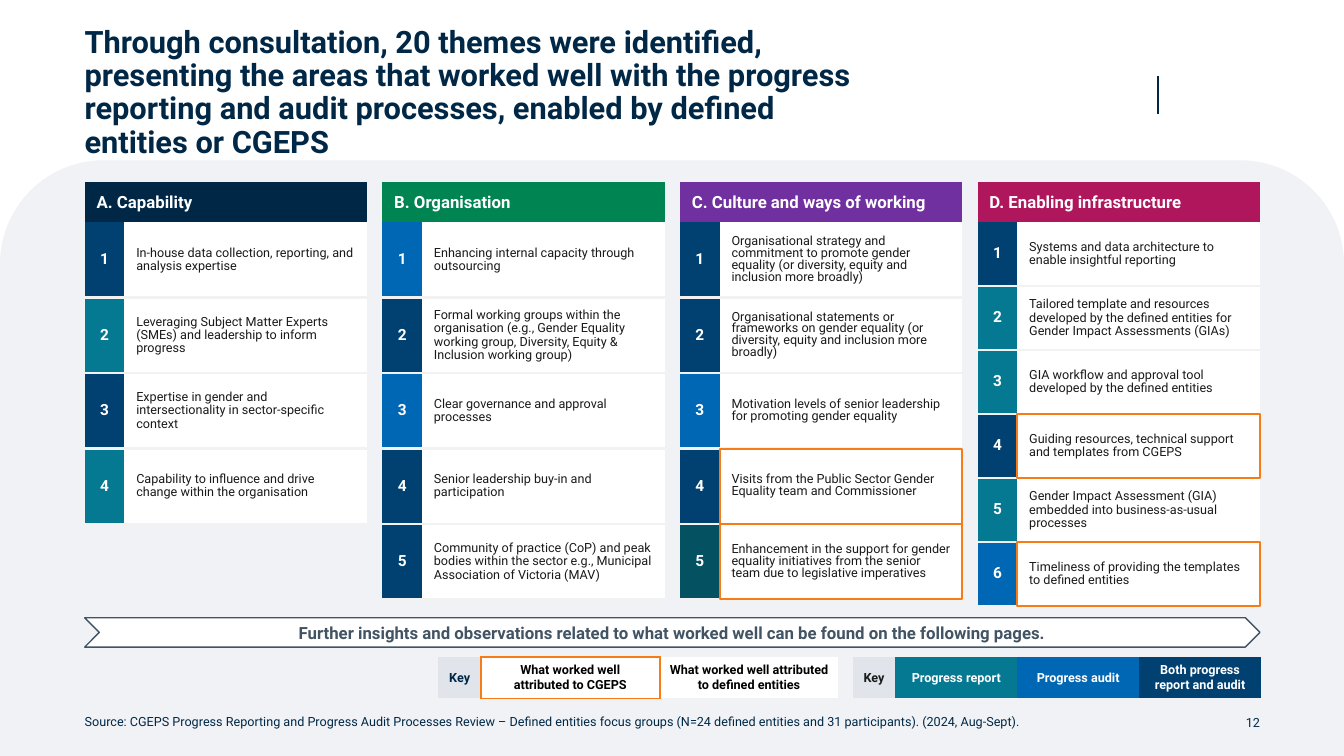
import pptx
import pptx.chart.data
import pptx.dml.color
import pptx.enum.shapes
import pptx.enum.text
import pptx.oxml
import pptx.oxml.ns
import pptx.util
from pptx.util import Pt

SHAPE = pptx.enum.shapes.MSO_SHAPE
LEFT, CENTER, RIGHT = (pptx.enum.text.PP_ALIGN.LEFT, pptx.enum.text.PP_ALIGN.CENTER,
                       pptx.enum.text.PP_ALIGN.RIGHT)
MIDDLE = pptx.enum.text.MSO_ANCHOR.MIDDLE

NAVY, INK, SLATE, WHITE, BLACK = "002846", "1A1A1A", "425364", "FFFFFF", "000000"
BACKDROP, KEY_GREY, RULE, ORANGE = "F0F2F5", "E1E5EB", "F2F2F2", "F77C16"
REPORT, AUDIT, BOTH, DEEP_TEAL = "057992", "0067B4", "004172", "045162"

TITLE = ("Through consultation, 20 themes were identified, presenting the areas that worked well "
         "with the progress reporting and audit processes, enabled by defined entities or CGEPS")
SOURCE = ("Source: CGEPS Progress Reporting and Progress Audit Processes Review – Defined entities "
          "focus groups (N=24 defined entities and 31 participants). (2024, Aug-Sept).")
BANNER = ("Further insights and observations related to what worked well can be found "
          "on the following pages.")

# heading, heading colour, row height, line spacing, rows attributed to CGEPS, themes
COLUMNS = [
    ("A. Capability", NAVY, 53.9, 0.9, (), [
        (BOTH, "In-house data collection, reporting, and analysis expertise"),
        (REPORT, "Leveraging Subject Matter Experts (SMEs) and leadership to inform progress"),
        (BOTH, "Expertise in gender and intersectionality in sector-specific context"),
        (REPORT, "Capability to influence and drive change within the organisation"),
    ]),
    ("B. Organisation", "008452", 53.9, 0.9, (), [
        (AUDIT, "Enhancing internal capacity through outsourcing"),
        (BOTH, "Formal working groups within the organisation (e.g., Gender Equality working "
               "group, Diversity, Equity & Inclusion working group)"),
        (AUDIT, "Clear governance and approval processes"),
        (BOTH, "Senior leadership buy-in and participation"),
        (BOTH, "Community of practice (CoP) and peak bodies within the sector e.g., Municipal "
               "Association of Victoria (MAV)"),
    ]),
    ("C. Culture and ways of working", "7030A0", 53.9, 0.8, (4, 5), [
        (BOTH, "Organisational strategy and commitment to promote gender equality (or diversity, "
               "equity and inclusion more broadly)"),
        (BOTH, "Organisational statements or frameworks on gender equality (or diversity, equity "
               "and inclusion more broadly)"),
        (AUDIT, "Motivation levels of senior leadership for promoting gender equality"),
        (BOTH, "Visits from the Public Sector Gender Equality team and Commissioner"),
        (DEEP_TEAL, "Enhancement in the support for gender equality initiatives from the senior "
                    "team due to legislative imperatives"),
    ]),
    ("D. Enabling infrastructure", "AF165B", 45.7, 0.9, (4, 6), [
        (BOTH, "Systems and data architecture to enable insightful reporting"),
        (REPORT, "Tailored template and resources developed by the defined entities for Gender "
                 "Impact Assessments (GIAs)"),
        (REPORT, "GIA workflow and approval tool developed by the defined entities"),
        (BOTH, "Guiding resources, technical support and templates from CGEPS"),
        (REPORT, "Gender Impact Assessment (GIA) embedded into business-as-usual processes"),
        (AUDIT, "Timeliness of providing the templates to defined entities"),
    ]),
]

# left, label width, entry width, then (text, fill, text colour, orange sides)
KEYS = [
    (313.2, 30.3, 127.7, [
        ("Key", KEY_GREY, NAVY, "R"),
        ("What worked well\vattributed to CGEPS", WHITE, BLACK, "LRTB"),
        ("What worked well attributed to defined entities", WHITE, BLACK, "L"),
    ]),
    (609.2, 30.3, 87.1, [
        ("Key", KEY_GREY, INK, ""),
        ("Progress report", REPORT, WHITE, ""),
        ("Progress audit", AUDIT, WHITE, ""),
        ("Both progress report and audit", BOTH, WHITE, ""),
    ]),
]

MARGIN, TABLE_TOP, COLUMN_PITCH = 60.5, 130.3, 212.6
NUMBER_WIDTH, THEME_WIDTH, HEADING_HEIGHT = 28.4, 173.2, 28.4
KEY_TOP, KEY_HEIGHT = 469.4, 29.5


def rgb(value):
    return pptx.dml.color.RGBColor.from_string(value)


def write(frame, text, size, colour, bold=False, align=LEFT, spacing=None):
    frame.word_wrap = True
    para = frame.paragraphs[0]
    para.text = text
    para.alignment = align
    if spacing:
        para.line_spacing = spacing
    para.font.name = "Roboto"
    para.font.size = Pt(size)
    para.font.bold = bold
    para.font.color.rgb = rgb(colour)


def add_text(page, left, top, width, height, *text, **style):
    frame = page.shapes.add_textbox(Pt(left), Pt(top), Pt(width), Pt(height)).text_frame
    frame.margin_left = frame.margin_right = frame.margin_top = frame.margin_bottom = 0
    frame.vertical_anchor = MIDDLE
    write(frame, *text, **style)


def add_box(page, kind, left, top, width, height, fill=None, line=None, weight=1.5):
    box = page.shapes.add_shape(kind, Pt(left), Pt(top), Pt(width), Pt(height))
    box.shadow.inherit = False
    if fill:
        box.fill.solid()
        box.fill.fore_color.rgb = rgb(fill)
    else:
        box.fill.background()
    if line:
        box.line.color.rgb = rgb(line)
        box.line.width = Pt(weight)
    else:
        box.line.fill.background()
    return box


def add_grid(page, left, top, widths, heights):
    """Add a table without header or banding effects."""
    grid = page.shapes.add_table(len(heights), len(widths), Pt(left), Pt(top),
                                 Pt(sum(widths)), Pt(sum(heights))).table
    grid.first_row = grid.horz_banding = False
    for column, width in zip(grid.columns, widths):
        column.width = Pt(width)
    for row, height in zip(grid.rows, heights):
        row.height = Pt(height)
    return grid


def style_cell(cell, fill, margins, sides="", colour=RULE, weight=2.25):
    """Fill a cell and draw only the named sides out of L, R, T and B."""
    properties = cell._tc.get_or_add_tcPr()
    for side in "LRTB":
        paint = (f'<a:solidFill><a:srgbClr val="{colour}"/></a:solidFill>'
                 if side in sides else "<a:noFill/>")
        properties.append(pptx.oxml.parse_xml(
            f'<a:ln{side} {pptx.oxml.ns.nsdecls("a")} w="{Pt(weight)}">{paint}</a:ln{side}>'))
    cell.fill.solid()
    cell.fill.fore_color.rgb = rgb(fill)
    cell.vertical_anchor = MIDDLE
    cell.margin_left = cell.margin_right = Pt(margins[0])
    cell.margin_top = cell.margin_bottom = Pt(margins[1])


def add_theme_table(page, left, heading, colour, row_height, spacing, themes):
    grid = add_grid(page, left, TABLE_TOP, [NUMBER_WIDTH, THEME_WIDTH],
                    [HEADING_HEIGHT] + [row_height] * len(themes))
    margins = (8.5, 5.7)
    grid.cell(0, 0).merge(grid.cell(0, 1))
    style_cell(grid.cell(0, 0), colour, margins)
    write(grid.cell(0, 0).text_frame, heading, 12, WHITE, bold=True)
    for number, (fill, theme) in enumerate(themes, 1):
        sides = "B" if number == 1 else "TB"
        label, body = grid.cell(number, 0), grid.cell(number, 1)
        style_cell(label, fill, margins, sides)
        style_cell(body, WHITE, margins, sides)
        write(label.text_frame, str(number), 11, WHITE, bold=True, align=CENTER, spacing=0.9)
        write(body.text_frame, theme, 9, INK, spacing=spacing)


def main():
    deck = pptx.Presentation()
    deck.slide_width, deck.slide_height = Pt(960), Pt(540)
    page = deck.slides.add_slide(deck.slide_layouts[6])

    backdrop = add_box(page, SHAPE.ROUND_2_SAME_RECTANGLE, 0, 114.5, 960, 425.5, BACKDROP)
    backdrop.adjustments[0] = 0.174
    divider = page.shapes.add_connector(pptx.enum.shapes.MSO_CONNECTOR.STRAIGHT,
                                        Pt(827.3), Pt(54), Pt(827.3), Pt(81.4))
    divider.line.color.rgb = rgb(NAVY)
    divider.line.width = Pt(1.5)
    divider._element.spPr.append(
        pptx.oxml.parse_xml(f'<a:effectLst {pptx.oxml.ns.nsdecls("a")}/>'))

    add_text(page, MARGIN, 35.3, 566.6, 62.6, TITLE, 22, NAVY, bold=True, spacing=0.9)
    add_text(page, 843, 506.2, 57, 20, "12", 9, NAVY, align=RIGHT)
    add_text(page, MARGIN, 506.2, 765, 20, SOURCE, 9, NAVY, spacing=0.9)

    for index, (heading, colour, row_height, spacing, outlined, themes) in enumerate(COLUMNS):
        left = MARGIN + index * COLUMN_PITCH
        add_theme_table(page, left, heading, colour, row_height, spacing, themes)
        for number in outlined:
            top = TABLE_TOP + HEADING_HEIGHT + (number - 1) * row_height
            add_box(page, SHAPE.RECTANGLE, left + NUMBER_WIDTH, top, THEME_WIDTH, row_height,
                    line=ORANGE)

    banner = add_box(page, SHAPE.CHEVRON, MARGIN, 441.2, 839.5, 21, WHITE, SLATE, 1)
    banner.text_frame.vertical_anchor = MIDDLE
    write(banner.text_frame, BANNER, 12, SLATE, bold=True, align=CENTER)

    for left, label_width, entry_width, entries in KEYS:
        widths = [label_width] + [entry_width] * (len(entries) - 1)
        grid = add_grid(page, left, KEY_TOP, widths, [KEY_HEIGHT])
        for index, (text, fill, colour, sides) in enumerate(entries):
            style_cell(grid.cell(0, index), fill, (7.2, 3.6), sides, ORANGE, 1.5)
            write(grid.cell(0, index).text_frame, text, 9, colour, bold=True, align=CENTER)

    deck.save("out.pptx")


if __name__ == "__main__":
    main()
